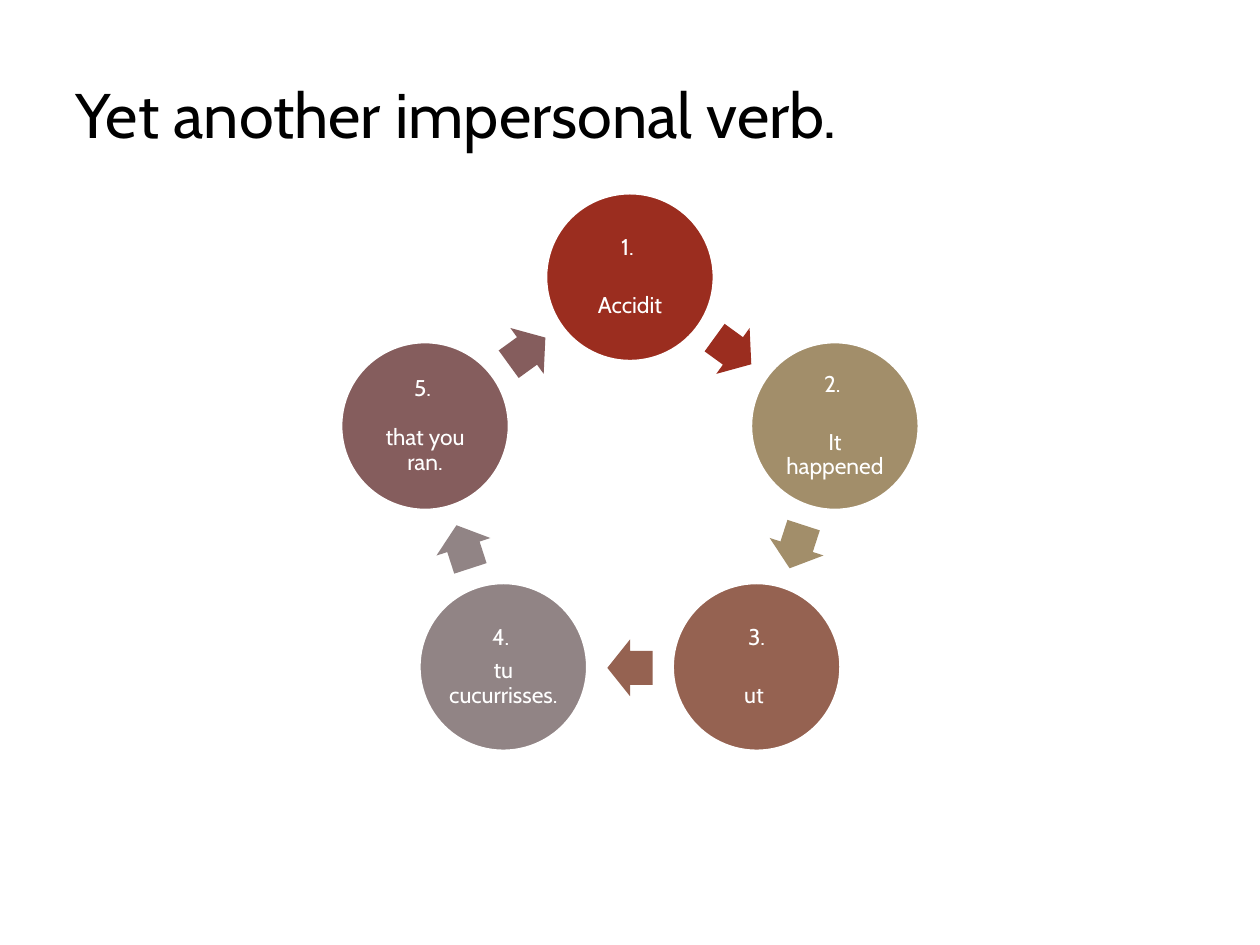
from math import cos, radians, sin

from pptx import Presentation
from pptx.dml.color import RGBColor
from pptx.enum import shapes as sh, text as tx
from pptx.util import Inches, Pt

HUES = {
    "red": "9B2D1F",
    "tan": "A28E6A",
    "brown": "956251",
    "gray": "918485",
    "plum": "855D5D",
    "white": "FFFFFF",
    "black": "000000",
}
STEPS = [
    ("red", "1. ", "Accidit", 19),
    ("tan", "2. ", "It happened", 19),
    ("brown", "3.", "ut ", 19),
    ("gray", "4. ", "tu cucurrisses.", 5),
    ("plum", "5. ", "that you ran.", 14),
]
MID_X, MID_Y = 5, 3.91
RING, TRACK = 1.71, 1.39
DISC = 1.34
WIDE, HIGH = 0.36, 0.45


def style(para, size, hue):
    para.font.name = "Cabin"
    para.font.size = Pt(size)
    para.font.color.rgb = RGBColor.from_string(HUES[hue])


def place(kind, angle, reach, wide, high, hue):
    left = MID_X + reach * sin(radians(angle)) - wide / 2
    top = MID_Y - reach * cos(radians(angle)) - high / 2
    shape = slide.shapes.add_shape(
        kind, Inches(left), Inches(top), Inches(wide), Inches(high))
    shape.shadow.inherit = False
    shape.fill.solid()
    shape.fill.fore_color.rgb = RGBColor.from_string(HUES[hue])
    return shape


deck = Presentation()
deck.slide_width, deck.slide_height = Inches(10), Inches(7.5)
slide = deck.slides.add_slide(deck.slide_layouts[5])

title = slide.shapes.title
title.left, title.top = Inches(0.5), Inches(0.08)
title.width, title.height = Inches(7.42), Inches(1.17)
title.text_frame.text = "Yet another impersonal verb."
title.text_frame.vertical_anchor = tx.MSO_ANCHOR.BOTTOM
head = title.text_frame.paragraphs[0]
head.alignment = tx.PP_ALIGN.LEFT
style(head, 36, "black")

for i, (hue, label, words, gap) in enumerate(STEPS):
    angle = 72 * i
    disc = place(sh.MSO_SHAPE.OVAL, angle, RING, DISC, DISC, hue)
    disc.line.color.rgb = RGBColor.from_string(HUES["white"])
    disc.line.width = Pt(2)

    frame = disc.text_frame
    frame.word_wrap = True
    frame.vertical_anchor = tx.MSO_ANCHOR.MIDDLE
    frame.margin_left = frame.margin_right = Inches(0.02)
    frame.margin_top = frame.margin_bottom = Inches(0.02)
    frame.text = f"{label}\n{words}"
    for para in frame.paragraphs:
        para.alignment = tx.PP_ALIGN.CENTER
        para.line_spacing = 0.9
        style(para, 13, "white")
    frame.paragraphs[0].space_after = Pt(gap)

    arrow = place(sh.MSO_SHAPE.RIGHT_ARROW, angle + 36, TRACK, WIDE, HIGH, hue)
    arrow.rotation = angle + 36
    arrow.adjustments[0] = 0.6
    arrow.adjustments[1] = 0.5
    arrow.line.fill.background()

deck.save("out.pptx")
